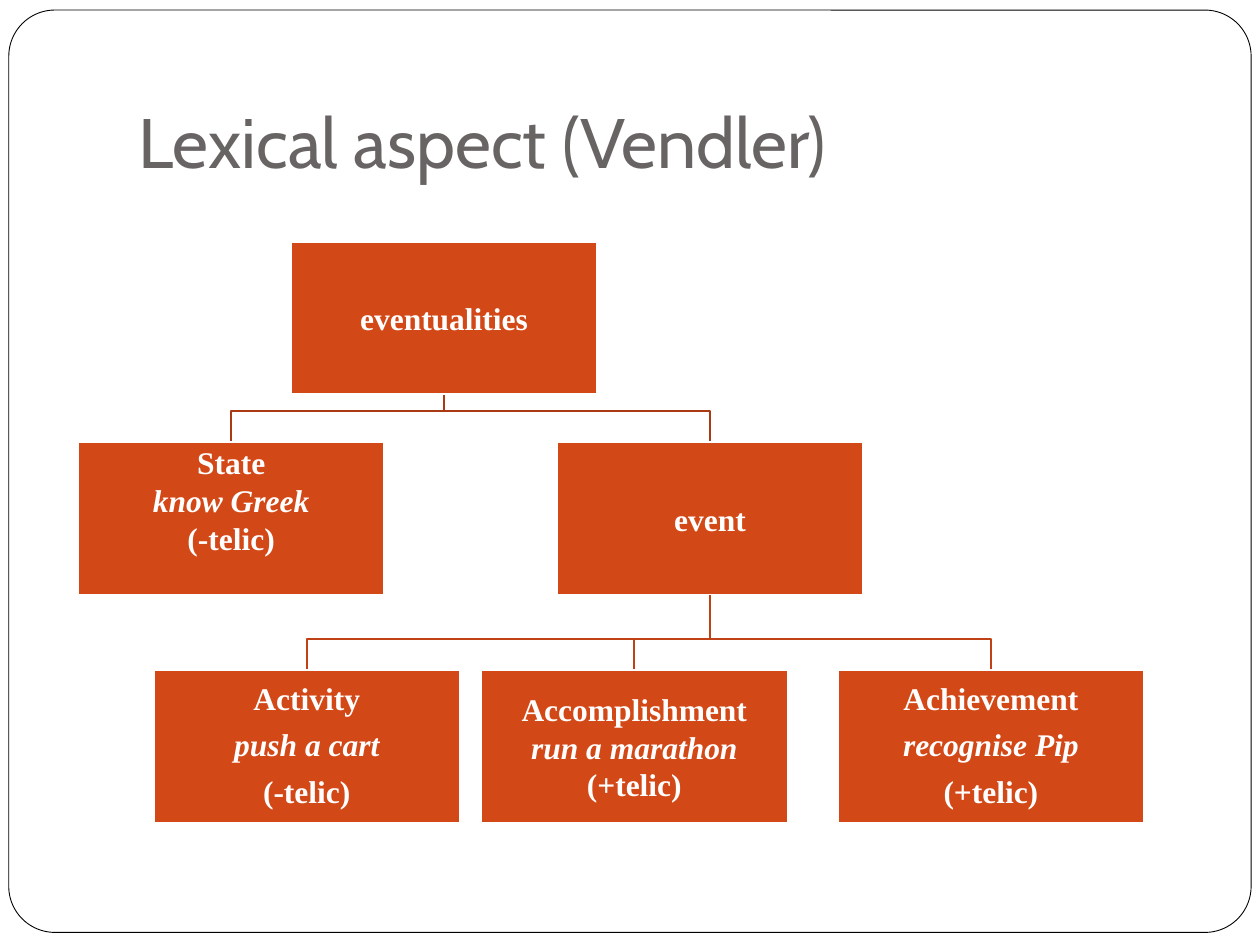
import pptx
import pptx.util
import pptx.dml.color
import pptx.enum.shapes
import pptx.enum.text

Inches, Pt = pptx.util.Inches, pptx.util.Pt
SHAPE = pptx.enum.shapes.MSO_SHAPE
ALIGN = pptx.enum.text.PP_ALIGN
ANCHOR = pptx.enum.text.MSO_ANCHOR

HEX = {"white": "FFFFFF", "black": "000000", "title": "696464",
       "node": "D34817", "upper": "A93A12", "lower": "BF4115"}
NODE_W, NODE_H = 2.43, 1.21
DROP = 0.25  # from the branch bar down to a child node

# name: (left, top, lines, loose spacing, bottom inset), from the tree's corner
NODES = {
    "root": (1.69, 0, ["eventualities"], False, 0.01),
    "state": (0, 1.59, ["State", "know Greek", "(-telic)"], False, 0.3),
    "event": (3.8, 1.59, ["event"], False, 0.01),
    "accomp": (3.2, 3.4, ["Accomplishment", "run a marathon", "(+telic)"], False, 0.01),
    "achieve": (6.03, 3.4, ["Achievement", "recognise Pip", "(+telic)"], True, 0.01),
    "active": (0.6, 3.4, ["Activity", "push a cart", "(-telic)"], True, 0.01),
}
LINKS = [("event", "active", "lower"), ("event", "achieve", "lower"),
         ("event", "accomp", "lower"), ("root", "event", "upper"),
         ("root", "state", "upper")]


def color(name):
    return pptx.dml.color.RGBColor.from_string(HEX[name])


def paint(shape, fill, line, width):
    """Set fill (None for no fill) and outline, without shadow."""
    shape.shadow.inherit = False
    if fill:
        shape.fill.solid()
        shape.fill.fore_color.rgb = color(fill)
    else:
        shape.fill.background()
    shape.line.color.rgb = color(line)
    shape.line.width = Pt(width)


def add_frame(slide, left, top, width, height):
    """Rounded border behind the title."""
    frame = slide.shapes.add_shape(SHAPE.ROUNDED_RECTANGLE, Inches(left), Inches(top),
                                   Inches(width), Inches(height))
    frame.adjustments[0] = 0.05
    paint(frame, "white", "black", 0.5)
    slide.shapes.title.element.addprevious(frame.element)


def set_title(slide, text, left, top, width, height):
    title = slide.shapes.title
    title.left, title.top = Inches(left), Inches(top)
    title.width, title.height = Inches(width), Inches(height)
    frame = title.text_frame
    frame.text = text
    frame.vertical_anchor = ANCHOR.BOTTOM
    frame.margin_bottom = Inches(0.1)
    para = frame.paragraphs[0]
    para.alignment = ALIGN.LEFT
    para.font.name, para.font.size = "Cabin", Pt(40)
    para.font.color.rgb = color("title")


def add_link(slide, left, top, parent, child, tint):
    """Bent line from a parent's bottom to a child's top."""
    start_x, start_y = left + parent[0] + NODE_W / 2, top + parent[1] + NODE_H
    end_x, end_y = left + child[0] + NODE_W / 2, top + child[1]
    bar = end_y - DROP
    path = slide.shapes.build_freeform(Inches(start_x), Inches(start_y))
    path.add_line_segments([(Inches(x), Inches(y)) for x, y in
                            [(start_x, bar), (end_x, bar), (end_x, end_y)]], close=False)
    paint(path.convert_to_shape(), None, tint, 1)


def add_node(slide, left, top, lines, loose, bottom):
    node = slide.shapes.add_shape(SHAPE.RECTANGLE, Inches(left), Inches(top),
                                  Inches(NODE_W), Inches(NODE_H))
    paint(node, "node", "white", 1)
    frame = node.text_frame
    frame.word_wrap = True
    frame.vertical_anchor = ANCHOR.MIDDLE
    frame.margin_left = frame.margin_right = frame.margin_top = Inches(0.01)
    frame.margin_bottom = Inches(bottom)
    frame.text = "\n".join(lines)
    for row, para in enumerate(frame.paragraphs):
        para.alignment = ALIGN.CENTER
        para.font.name, para.font.size = "Times New Roman", Pt(18)
        para.font.bold, para.font.italic = True, row == 1
        para.font.color.rgb = color("white")
        if loose:
            para.line_spacing, para.space_after = 0.9, Pt(7)


def add_tree(slide, left, top):
    for parent, child, tint in LINKS:
        add_link(slide, left, top, NODES[parent], NODES[child], tint)
    for x, y, *text in NODES.values():
        add_node(slide, left + x, top + y, *text)


def main():
    deck = pptx.Presentation()
    deck.slide_width, deck.slide_height = Inches(10), Inches(7.5)
    slide = deck.slides.add_slide(deck.slide_layouts[5])
    add_frame(slide, 0.07, 0.08, 9.86, 7.32)
    set_title(slide, "Lexical aspect (Vendler)", 1, 0.3, 8.5, 1.25)
    add_tree(slide, 0.62, 1.92)
    deck.save("out.pptx")


if __name__ == "__main__":
    main()
